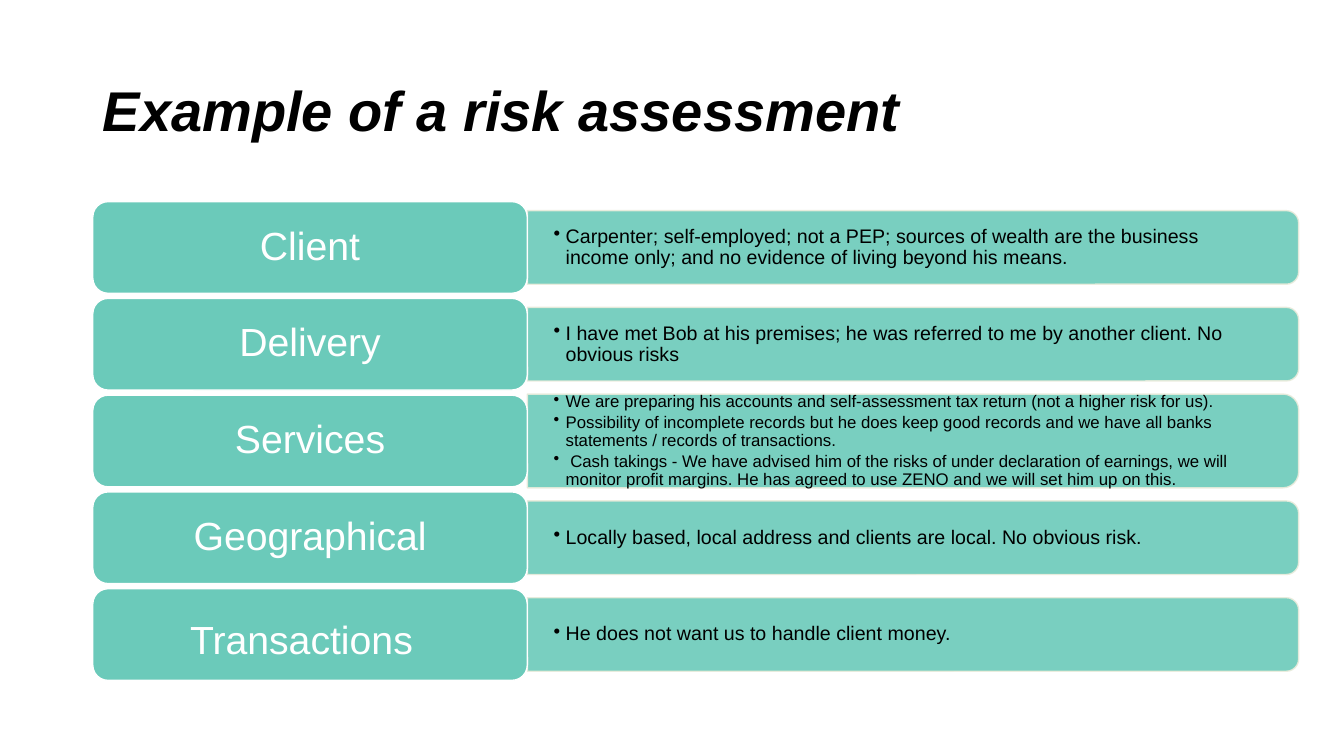
from pptx import Presentation
from pptx import util as u
from pptx.dml.color import RGBColor
from pptx.enum import shapes, text
from pptx.oxml.ns import qn
from lxml import etree

HUES = {"teal": "6BCABA", "edge": "EAECDC", "white": "FFFFFF", "black": "000000"}
ROWS = [
    ("Client", 0.73, 14, [
        "Carpenter; self-employed; not a PEP; sources of wealth are the business "
        "income only; and no evidence of living beyond his means."]),
    ("Delivery", 0.73, 14, [
        "I have met Bob at his premises; he was referred to me by another client. "
        "No obvious risks"]),
    ("Services", 0.93, 12, [
        "We are preparing his accounts and self-assessment tax return "
        "(not a higher risk for us).",
        "Possibility of incomplete records but he does keep good records and we "
        "have all banks statements / records of transactions.",
        " Cash takings - We have advised him of the risks of under declaration of "
        "earnings, we will monitor profit margins. He has agreed to use ZENO and "
        "we will set him up on this."]),
    ("Geographical", 0.73, 14, [
        "Locally based, local address and clients are local. No obvious risk."]),
    ("Transactions", 0.73, 14, ["He does not want us to handle client money."]),
]
LEFT, TOP, STEP = 0.92, 2, 0.96
TAB_W, TAB_H, BAR_W = 4.31, 0.91, 7.65


def add_run(para, words, size, hue):
    run = para.add_run()
    run.text = words
    run.font.name = "Arial"
    run.font.size = u.Pt(size)
    run.font.color.rgb = RGBColor.from_string(HUES[hue])
    para.line_spacing = 0.9
    return run


def add_box(kind, x, y, w, h, edge):
    box = slide.shapes.add_shape(kind, u.Inches(x), u.Inches(y), u.Inches(w), u.Inches(h))
    box.shadow.inherit = False
    box.fill.solid()
    box.fill.fore_color.rgb = RGBColor.from_string(HUES["teal"])
    box.line.color.rgb = RGBColor.from_string(HUES[edge])
    box.line.width = u.Pt(1)
    return box


deck = Presentation()
deck.slide_width, deck.slide_height = u.Inches(13.33), u.Inches(7.5)
slide = deck.slides.add_slide(deck.slide_layouts[5])

# Title
title = slide.shapes.title
title.left, title.top = u.Inches(LEFT), u.Inches(0.4)
title.width, title.height = u.Inches(11.96), u.Inches(1.45)
title.text_frame.vertical_anchor = text.MSO_ANCHOR.MIDDLE
para = title.text_frame.paragraphs[0]
para.alignment = text.PP_ALIGN.LEFT
run = add_run(para, "Example of a risk assessment", 40, "black")
run.font.bold = run.font.italic = True

for i, (name, high, size, notes) in enumerate(ROWS):
    y = TOP + i * STEP
    mid = y + TAB_H / 2

    # Bar, turned so that its round corners face right
    x = LEFT + TAB_W + (BAR_W - high) / 2
    bar = add_box(shapes.MSO_SHAPE.ROUND_2_SAME_RECTANGLE,
                  x, mid - BAR_W / 2, high, BAR_W, "edge")
    bar.rotation = 90
    for tint in bar._element.spPr.iter(qn("a:srgbClr")):
        etree.SubElement(tint, qn("a:alpha")).set("val", "90000")

    # Bulleted findings
    tall = high - 0.08
    box = slide.shapes.add_textbox(u.Inches(5.22), u.Inches(mid - tall / 2),
                                   u.Inches(7.62), u.Inches(tall))
    frame = box.text_frame
    frame.word_wrap = True
    frame.vertical_anchor = text.MSO_ANCHOR.MIDDLE
    frame.margin_left = frame.margin_right = u.Inches(0.27)
    frame.margin_top = frame.margin_bottom = u.Inches(0.14)
    for n, note in enumerate(notes):
        para = frame.add_paragraph() if n else frame.paragraphs[0]
        add_run(para, note, size, "black")
        para.space_after = u.Pt(size * 0.15)
        props = para._p.get_or_add_pPr()
        props.set("marL", str(u.Inches(0.12)))
        props.set("indent", str(-u.Inches(0.12)))
        etree.SubElement(props, qn("a:buChar")).set("char", "•")

    # Heading tab
    tab = add_box(shapes.MSO_SHAPE.ROUNDED_RECTANGLE, LEFT, y, TAB_W, TAB_H, "white")
    frame = tab.text_frame
    frame.word_wrap = True
    frame.vertical_anchor = text.MSO_ANCHOR.MIDDLE
    para = frame.paragraphs[0]
    para.alignment = text.PP_ALIGN.CENTER
    add_run(para, name, 28, "white")
    if name == "Transactions":
        add_run(para, " ", 44, "white")

deck.save("out.pptx")
